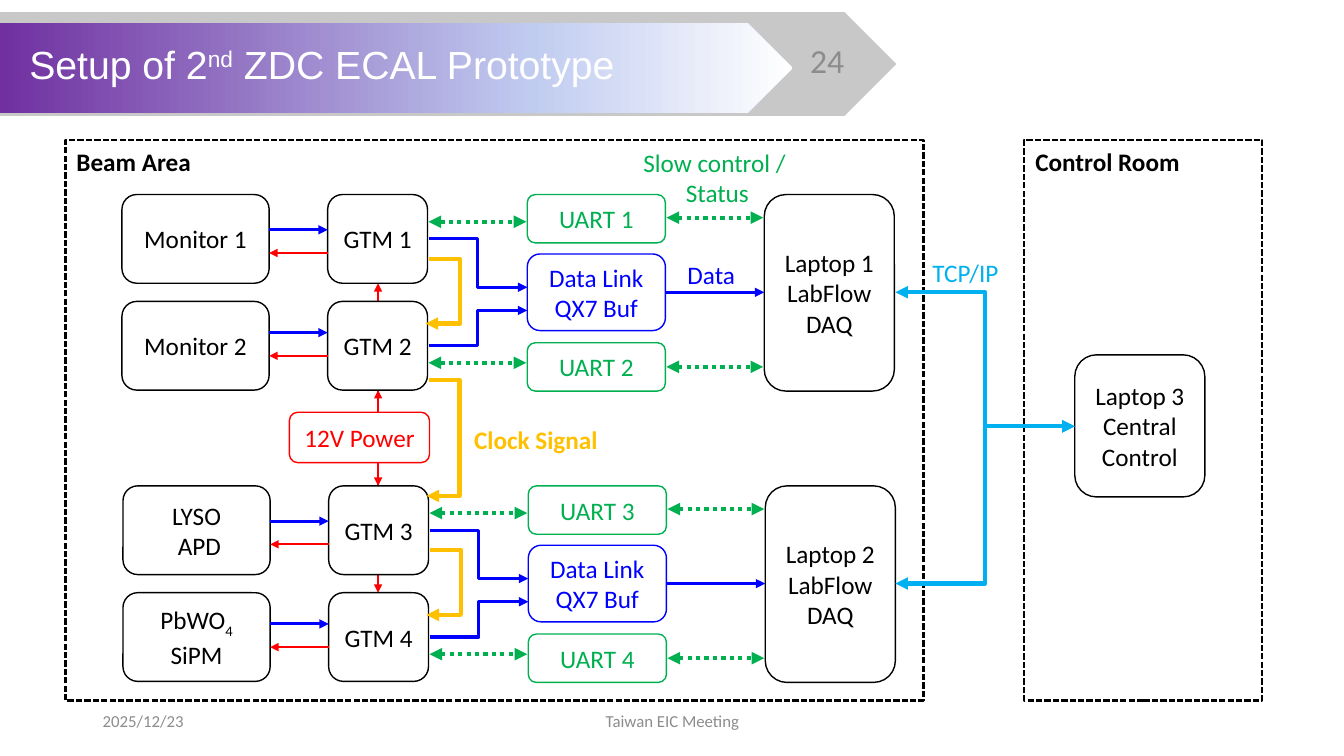
import copy
import dataclasses

import lxml.etree
import pptx
import pptx.dml.color
import pptx.enum.dml
import pptx.enum.shapes
import pptx.enum.text
import pptx.oxml.ns
import pptx.util

Inches = pptx.util.Inches
Preset = pptx.enum.shapes.MSO_SHAPE
Dash = pptx.enum.dml.MSO_LINE
Align = pptx.enum.text.PP_ALIGN
Anchor = pptx.enum.text.MSO_ANCHOR


@dataclasses.dataclass(frozen=True)
class Theme:
    """Colours, fonts and type sizes of the slide."""
    black: str = "000000"
    white: str = "FFFFFF"
    purple: str = "7030A0"
    pale_blue: str = "C0CBF0"
    shade: str = "C8C8C8"
    muted: str = "8C8C8C"
    power: str = "FF0000"
    data: str = "0000FF"
    control: str = "00B050"
    clock: str = "FFC000"
    network: str = "00B0F0"
    heading_font: str = "Arial"
    body_font: str = "Calibri"
    title_size: int = 28
    number_size: int = 24
    body_size: int = 18
    footer_size: int = 12


THEME = Theme()


def rgb(value):
    """Return a colour object for a hex string."""
    return pptx.dml.color.RGBColor.from_string(value)


def add_child(parent, tag, **attributes):
    """Append a drawing element with the given attributes."""
    child = lxml.etree.SubElement(parent, pptx.oxml.ns.qn(tag))
    for name, value in attributes.items():
        child.set(name, value)
    return child


def write_text(frame, text, size=THEME.body_size, color=THEME.black, font=THEME.body_font,
               bold=False, align=Align.LEFT, anchor=Anchor.TOP, wrap=True, spacing=None,
               baseline=0):
    """Write lines split by newlines; text between bars takes the baseline shift."""
    frame.word_wrap = wrap
    frame.vertical_anchor = anchor
    for index, line in enumerate(text.split("\n")):
        paragraph = frame.paragraphs[0] if index == 0 else frame.add_paragraph()
        paragraph.alignment = align
        paragraph.line_spacing = spacing
        for position, part in enumerate(line.split("|")):
            run = paragraph.add_run()
            run.text = part
            run.font.name = font
            run.font.size = pptx.util.Pt(size)
            run.font.bold = bold
            run.font.color.rgb = rgb(color)
            if position % 2:
                run.font._element.set("baseline", str(baseline))


def add_label(slide, box, text, **text_format):
    """Add a text box at left, top, width, height."""
    shape = slide.shapes.add_textbox(*map(Inches, box))
    write_text(shape.text_frame, text, **text_format)


def add_outline(slide, box, preset, color=THEME.black, fill=None, width=1, dash=None):
    """Add an outlined shape with an optional fill."""
    shape = slide.shapes.add_shape(preset, *map(Inches, box))
    shape.shadow.inherit = False
    if fill:
        shape.fill.solid()
        shape.fill.fore_color.rgb = rgb(fill)
    else:
        shape.fill.background()
    shape.line.color.rgb = rgb(color)
    shape.line.width = pptx.util.Pt(width)
    shape.line.dash_style = dash
    return shape


def add_block(slide, box, text, color=THEME.black, fill=None, baseline=0):
    """Add a rounded diagram block with centred text."""
    shape = add_outline(slide, box, Preset.ROUNDED_RECTANGLE, color, fill)
    write_text(shape.text_frame, text, color=color, align=Align.CENTER,
               anchor=Anchor.MIDDLE, baseline=baseline)


def add_arrow(slide, start, end, color, width, both=False, dash=None, turn=None):
    """Add an arrow, bent at the horizontal position turn when one is given."""
    kinds = pptx.enum.shapes.MSO_CONNECTOR
    kind = kinds.STRAIGHT if turn is None else kinds.ELBOW
    arrow = slide.shapes.add_connector(kind, *map(Inches, (*start, *end)))
    arrow.line.color.rgb = rgb(color)
    arrow.line.width = pptx.util.Pt(width)
    arrow.line.dash_style = dash
    properties = arrow._element.spPr
    line = properties.find(pptx.oxml.ns.qn("a:ln"))
    if both:
        add_child(line, "a:headEnd", type="triangle")
    add_child(line, "a:tailEnd", type="triangle")
    add_child(properties, "a:effectLst")
    if turn is not None:
        ratio = round(100000 * (turn - start[0]) / (end[0] - start[0]))
        guides = properties.find(".//" + pptx.oxml.ns.qn("a:avLst"))
        add_child(guides, "a:gd", name="adj1", fmla=f"val {ratio}")


def draw_header(slide, left, top):
    """Draw the gradient banner, the title and the slide number."""
    shade = add_outline(slide, (left, top - 0.11, 8.89, 1.03), Preset.PENTAGON, fill=THEME.shade)
    shade.line.fill.background()
    banner = add_outline(slide, (left, top, 7.86, 0.89), Preset.PENTAGON)
    banner.line.fill.background()
    banner.fill.gradient()
    banner.fill.gradient_angle = 0
    stops = banner._element.spPr.find(".//" + pptx.oxml.ns.qn("a:gsLst"))
    stops.append(copy.deepcopy(stops[-1]))
    colors = (THEME.purple, THEME.pale_blue, THEME.white)
    for stop, position, color in zip(banner.fill.gradient_stops, (0, 0.67, 1), colors):
        stop.position = position
        stop.color.rgb = rgb(color)
    title = slide.shapes.title
    title.left, title.top = Inches(left + 0.19), Inches(top + 0.17)
    title.width, title.height = Inches(7.22), Inches(0.56)
    write_text(title.text_frame, "Setup of 2|nd| ZDC ECAL Prototype", size=THEME.title_size,
               color=THEME.white, font=THEME.heading_font, spacing=0.9, baseline=30000)
    slide.shapes._spTree.append(title._element)
    add_label(slide, (left + 7.86, top + 0.17, 0.61, 0.4), "24", size=THEME.number_size,
              color=THEME.muted, align=Align.RIGHT, anchor=Anchor.MIDDLE)


def draw_power(slide, left, top):
    """Draw the power supply and its arrows to the four trigger modules."""
    add_block(slide, (left, top, 1.39, 0.5), "12V Power", THEME.power)
    center = left + 0.88
    for start, ends in ((top, (-1.28, -0.22)), (top + 0.5, (0.73, 1.79))):
        for end in ends:
            add_arrow(slide, (center, start), (center, top + end), THEME.power, 1.5)


def draw_readout(slide, left, top, detectors, first, laptop):
    """Draw two detectors with their modules, buffer, control links and laptop."""
    module, middle, right = left + 2.04, left + 4.02, left + 6.37
    module_end, middle_end = module + 1, middle + 1.37
    for row, detector in enumerate(detectors):
        number = first + row
        y = top + 1.06 * row
        add_block(slide, (left, y, 1.46, 0.88), detector, baseline=-25000)
        add_block(slide, (module, y, 0.99, 0.88), f"GTM {number}", fill=THEME.white)
        add_block(slide, (middle, top + 1.47 * row, 1.37, 0.48), f"UART {number}", THEME.control)
        signal = top + 0.35 + 1.02 * row
        add_arrow(slide, (module, signal + 0.23), (left + 1.46, signal + 0.23), THEME.power, 1.5)
        add_arrow(slide, (left + 1.46, signal), (module, signal), THEME.data, 2.25)
        add_arrow(slide, (module_end, y + 0.44), (middle, top + 0.92 + 0.23 * row),
                  THEME.data, 2.25, turn=left + 3.53)
        links = ((module_end, middle - 0.01, (0.27, 1.67)[row]),
                 (middle_end + 0.01, right - 0.01, (0.23, 1.71)[row]))
        for start, end, offset in links:
            add_arrow(slide, (start, top + offset), (end, top + offset), THEME.control, 3,
                      both=True, dash=Dash.ROUND_DOT)
    add_block(slide, (middle, top + 0.59, 1.37, 0.76), "Data Link\nQX7 Buf", THEME.data)
    add_block(slide, (right, top, 1.29, 1.95), f"{laptop}\nLabFlow\nDAQ")
    add_arrow(slide, (middle_end, top + 0.97), (right, top + 0.97), THEME.data, 2.25)
    add_arrow(slide, (module_end + 0.01, top + 0.64), (module_end - 0.03, top + 1.28),
              THEME.clock, 3, turn=module_end + 0.31)


def draw_area(slide, box, name):
    """Draw a dashed area with its name in the top left corner."""
    add_outline(slide, box, Preset.RECTANGLE, width=1.5, dash=Dash.SQUARE_DOT)
    add_label(slide, (box[0] + 0.01, box[1] + 0.01, 1.64, 0.4), name, bold=True)


def draw_beam_area(slide, left, top):
    """Draw the beam area with both readout groups."""
    draw_area(slide, (left, top, 8.51, 5.56), "Beam Area")
    draw_power(slide, left + 2.22, top + 2.7)
    draw_readout(slide, left + 0.56, top + 0.54, ("Monitor 1", "Monitor 2"), 1, "Laptop 1")
    draw_readout(slide, left + 0.57, top + 3.43, ("LYSO\n APD", "PbWO|4 |SiPM"), 3, "Laptop 2")
    add_arrow(slide, (left + 3.61, top + 2.38), (left + 3.58, top + 3.53), THEME.clock, 3,
              turn=left + 3.91)
    add_label(slide, (left + 5.61, top + 0.02, 1.71, 0.71), "Slow control / \nStatus",
              color=THEME.control, align=Align.CENTER)
    add_label(slide, (left + 6.07, top + 1.13, 0.68, 0.4), "Data", color=THEME.data, wrap=False)
    add_label(slide, (left + 3.81, top + 2.77, 1.71, 0.4), "Clock Signal", color=THEME.clock,
              bold=True, align=Align.CENTER)


def draw_control_room(slide, left, top):
    """Draw the control room and its network links to the beam area."""
    draw_area(slide, (left, top, 2.36, 5.56), "Control Room")
    add_block(slide, (left + 0.5, top + 2.13, 1.29, 1.41), "Laptop 3\nCentral Control")
    for offset in (1.51, 4.4):
        add_arrow(slide, (left - 1.28, top + offset), (left + 0.5, top + 2.84),
                  THEME.network, 3, both=True, turn=left - 0.39)
    add_label(slide, (left - 1.01, top + 1.11, 0.86, 0.4), "TCP/IP", color=THEME.network,
              wrap=False)


def draw_footer(slide, left, top):
    """Write the date and the meeting name."""
    footer = {"size": THEME.footer_size, "color": THEME.muted, "anchor": Anchor.MIDDLE}
    add_label(slide, (left, top, 3, 0.4), "2025/12/23", **footer)
    add_label(slide, (left + 3.5, top, 4.5, 0.4), "Taiwan EIC Meeting", align=Align.CENTER,
              **footer)


def main():
    """Build and save the slide."""
    presentation = pptx.Presentation()
    presentation.slide_width, presentation.slide_height = Inches(13.33), Inches(7.5)
    slide = presentation.slides.add_slide(presentation.slide_layouts[5])
    draw_header(slide, 0, 0.23)
    draw_beam_area(slide, 0.65, 1.39)
    draw_control_room(slide, 10.16, 1.39)
    draw_footer(slide, 0.92, 6.95)
    presentation.save("out.pptx")


if __name__ == "__main__":
    main()
